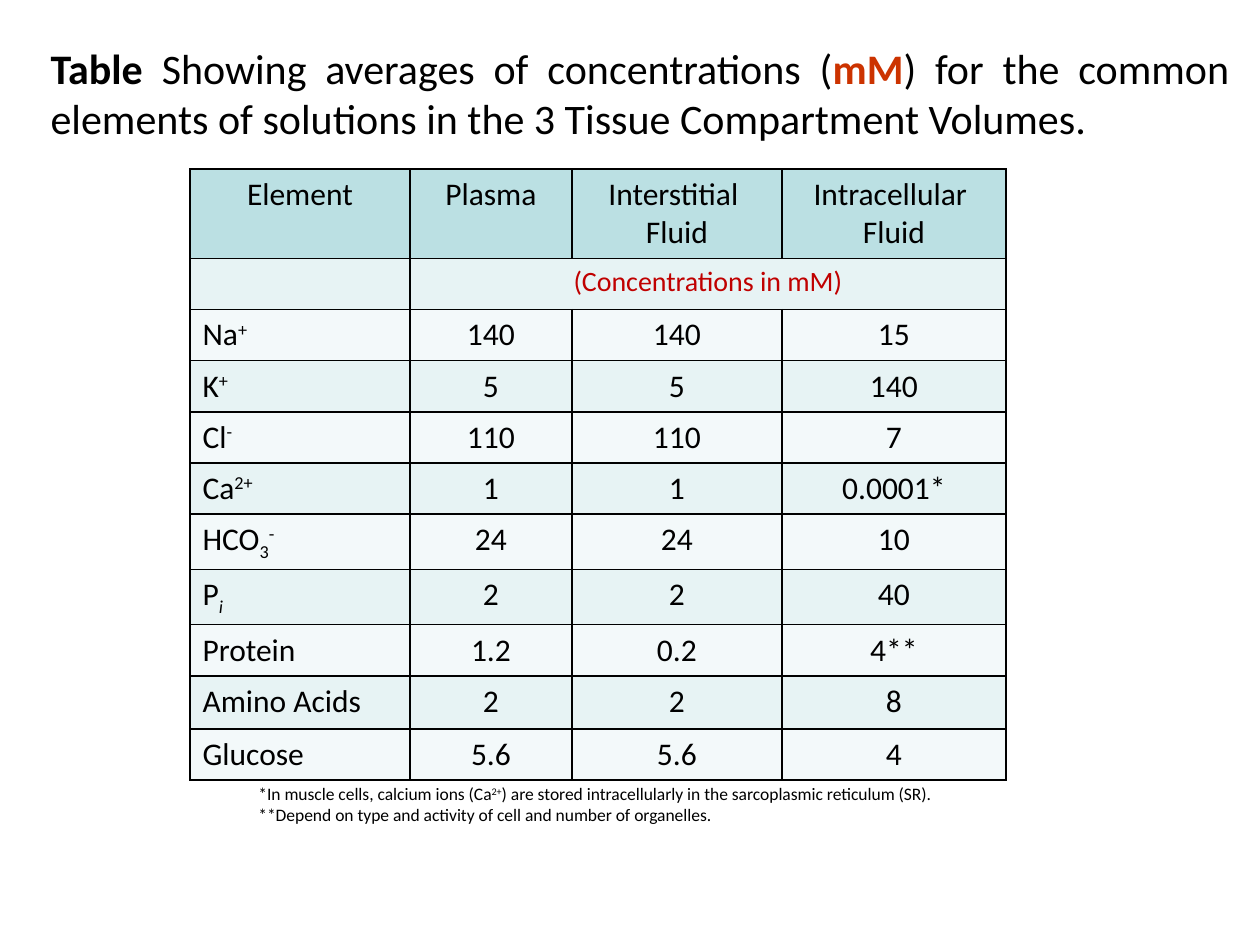
from lxml.etree import SubElement
from pptx import Presentation
from pptx.dml.color import RGBColor
from pptx.enum.text import MSO_ANCHOR, MSO_AUTO_SIZE, PP_ALIGN as Align
from pptx.oxml.ns import qn
from pptx.util import Emu, Pt

FONT = "Calibri"
BLACK, RED, ORANGE = "000000", "C00000", "CC3300"
HEADER_FILL, BANDS = "BBE0E3", ("E7F3F4", "F3F9FA")
COLUMN_WIDTHS = (220, 162, 210, 224)
ROW_HEIGHTS = (89, *[51] * 8, 53, 51)
SUPER, SUB = {"baseline": 30}, {"baseline": -25}

HEADINGS = ("Element", "Plasma", "Interstitial \nFluid", "Intracellular \nFluid")
CONCENTRATIONS = (
    ([("Na", {}), ("+", SUPER)], "140", "140", "15"),
    ([("K", {}), ("+", SUPER)], "5", "5", "140"),
    ([("Cl", {}), ("-", SUPER)], "110", "110", "7"),
    ([("Ca", {}), ("2+", SUPER)], "1", "1", "0.0001*"),
    ([("HCO", {}), ("3", SUB), ("-", SUPER)], "24", "24", "10"),
    ([("P", {}), ("i", {**SUB, "italic": True})], "2", "2", "40"),
    ("Protein", "1.2", "0.2", "4**"),
    ("Amino Acids", "2", "2", "8"),
    ("Glucose", "5.6", "5.6", "4"),
)
TITLE = [
    ("Table ", {"bold": True}),
    ("Showing averages of concentrations (", {}),
    ("mM", {"bold": True, "color": ORANGE}),
    (") for the common elements of solutions in the 3 Tissue Compartment Volumes. ", {}),
]
FOOTNOTES = (
    [
        ("*In muscle cells, calcium ions (Ca", {}),
        ("2+", SUPER),
        (") are stored intracellularly in the sarcoplasmic reticulum (SR).", {}),
    ],
    "**Depend on type and activity of cell and number of organelles.",
)


def px(length):
    """Turn px into EMU."""
    return Emu(round(length * 914400 / 126))


def rgb(color):
    """Turn a hex string into a colour."""
    return RGBColor.from_string(color)


def write(frame, lines, size, align, color=BLACK):
    """Fill a text frame with lines, each a string or a list of styled runs."""
    for index, line in enumerate(lines):
        paragraph = frame.add_paragraph() if index else frame.paragraphs[0]
        paragraph.alignment = align
        paragraph.font.name, paragraph.font.size = FONT, Pt(size)
        paragraph.font.color.rgb = rgb(color)
        for text, style in [(line, {})] if isinstance(line, str) else line:
            run = paragraph.add_run()
            run.text = text
            if "bold" in style:
                run.font.bold = style["bold"]
            if "italic" in style:
                run.font.italic = style["italic"]
            if "color" in style:
                run.font.color.rgb = rgb(style["color"])
            if "baseline" in style:
                run.font._element.set("baseline", str(style["baseline"] * 1000))


def style_cell(cell, fill):
    """Fill a cell and give it thin black borders."""
    cell.fill.solid()
    cell.fill.fore_color.rgb = rgb(fill)
    properties = cell._tc.get_or_add_tcPr()
    for position, side in enumerate(("lnL", "lnR", "lnT", "lnB")):
        border = SubElement(properties, qn(f"a:{side}"), w=str(Pt(1)))
        paint = SubElement(border, qn("a:solidFill"))
        SubElement(paint, qn("a:srgbClr"), val=BLACK)
        properties.insert(position, border)


def add_title(slide, left, top, width, height):
    """Place the justified title."""
    title = slide.shapes.title
    title.left, title.top, title.width, title.height = map(px, (left, top, width, height))
    frame = title.text_frame
    frame.word_wrap = True
    frame.auto_size = MSO_AUTO_SIZE.NONE
    frame.vertical_anchor = MSO_ANCHOR.MIDDLE
    write(frame, [TITLE], 24, Align.JUSTIFY)


def add_concentrations(slide, left, top):
    """Place the table of concentrations by compartment."""
    table = slide.shapes.add_table(
        len(ROW_HEIGHTS), len(COLUMN_WIDTHS), px(left), px(top),
        px(sum(COLUMN_WIDTHS)), px(sum(ROW_HEIGHTS)),
    ).table
    for column, width in zip(table.columns, COLUMN_WIDTHS):
        column.width = px(width)
    for index, (row, height) in enumerate(zip(table.rows, ROW_HEIGHTS)):
        row.height = px(height)
        for cell in row.cells:
            style_cell(cell, BANDS[(index + 1) % 2] if index else HEADER_FILL)
    for cell, heading in zip(table.rows[0].cells, HEADINGS):
        write(cell.text_frame, heading.split("\n"), 18, Align.CENTER)
    table.cell(1, 1).merge(table.cell(1, 3))
    write(table.cell(1, 1).text_frame, ["(Concentrations in mM)"], 16, Align.CENTER, RED)
    for row_index, values in enumerate(CONCENTRATIONS, 2):
        for column_index, value in enumerate(values):
            align = Align.CENTER if column_index else Align.LEFT
            write(table.cell(row_index, column_index).text_frame, [value], 18, align)


def add_footnotes(slide, left, top, width, height):
    """Place the notes under the table."""
    frame = slide.shapes.add_textbox(*map(px, (left, top, width, height))).text_frame
    frame.word_wrap = True
    frame.auto_size = MSO_AUTO_SIZE.SHAPE_TO_FIT_TEXT
    write(frame, FOOTNOTES, 10, Align.JUSTIFY)


def main():
    """Build the slide and save it."""
    deck = Presentation()
    deck.slide_width, deck.slide_height = px(1260), px(945)
    slide = deck.slides.add_slide(deck.slide_layouts[5])
    add_title(slide, 38, 35, 1204, 115)
    add_concentrations(slide, 190, 169)
    add_footnotes(slide, 246, 777, 723, 55)
    deck.save("out.pptx")


if __name__ == "__main__":
    main()
